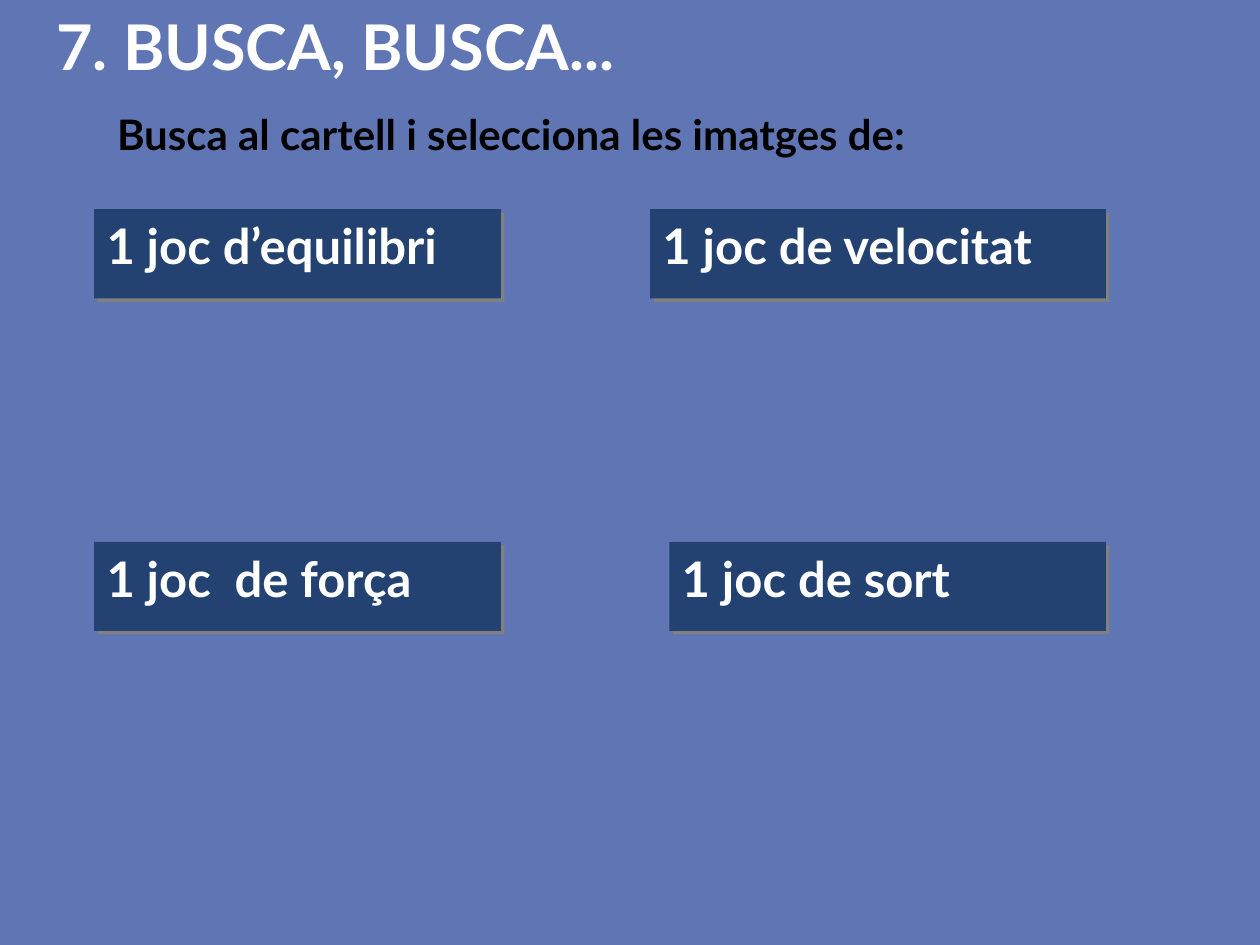
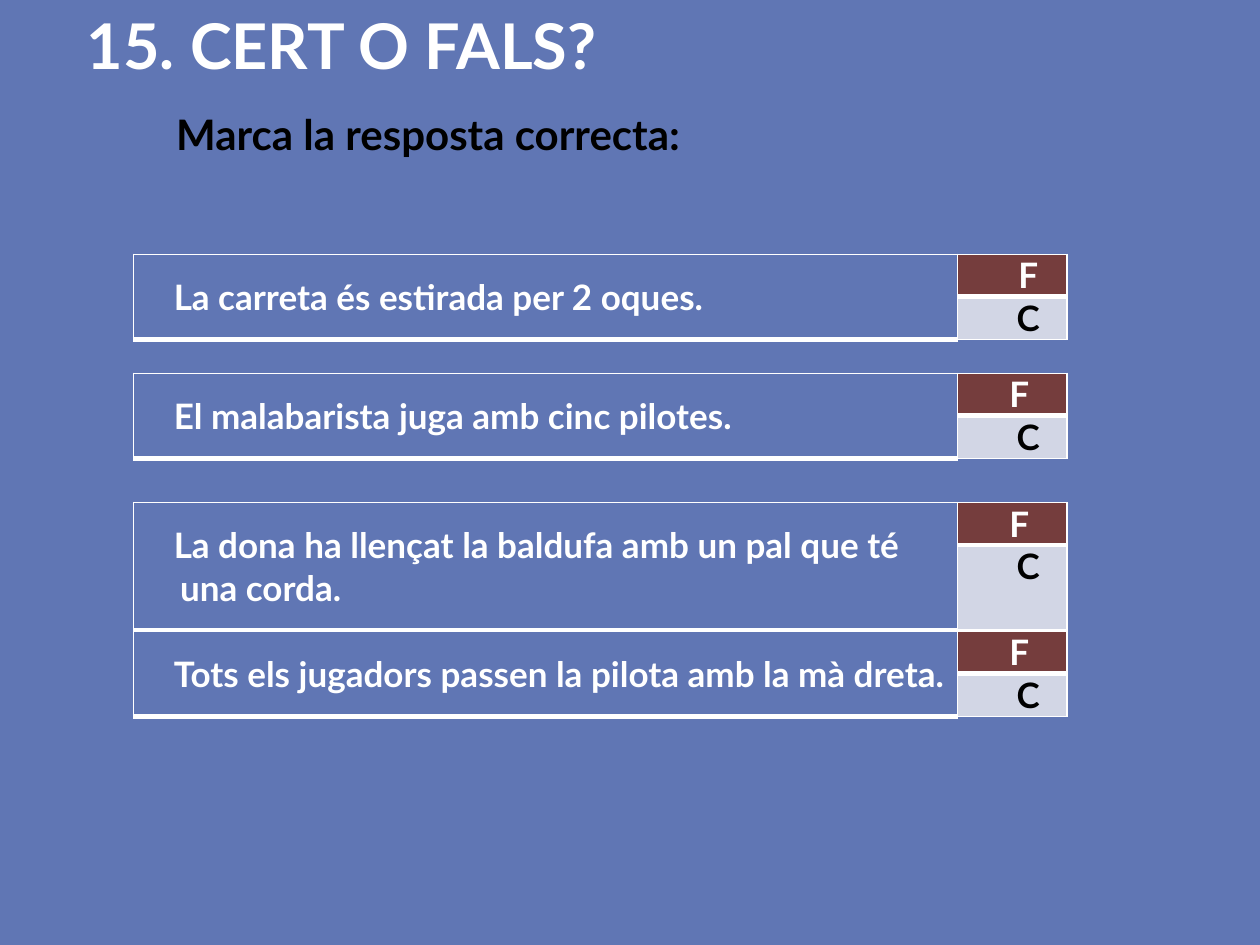
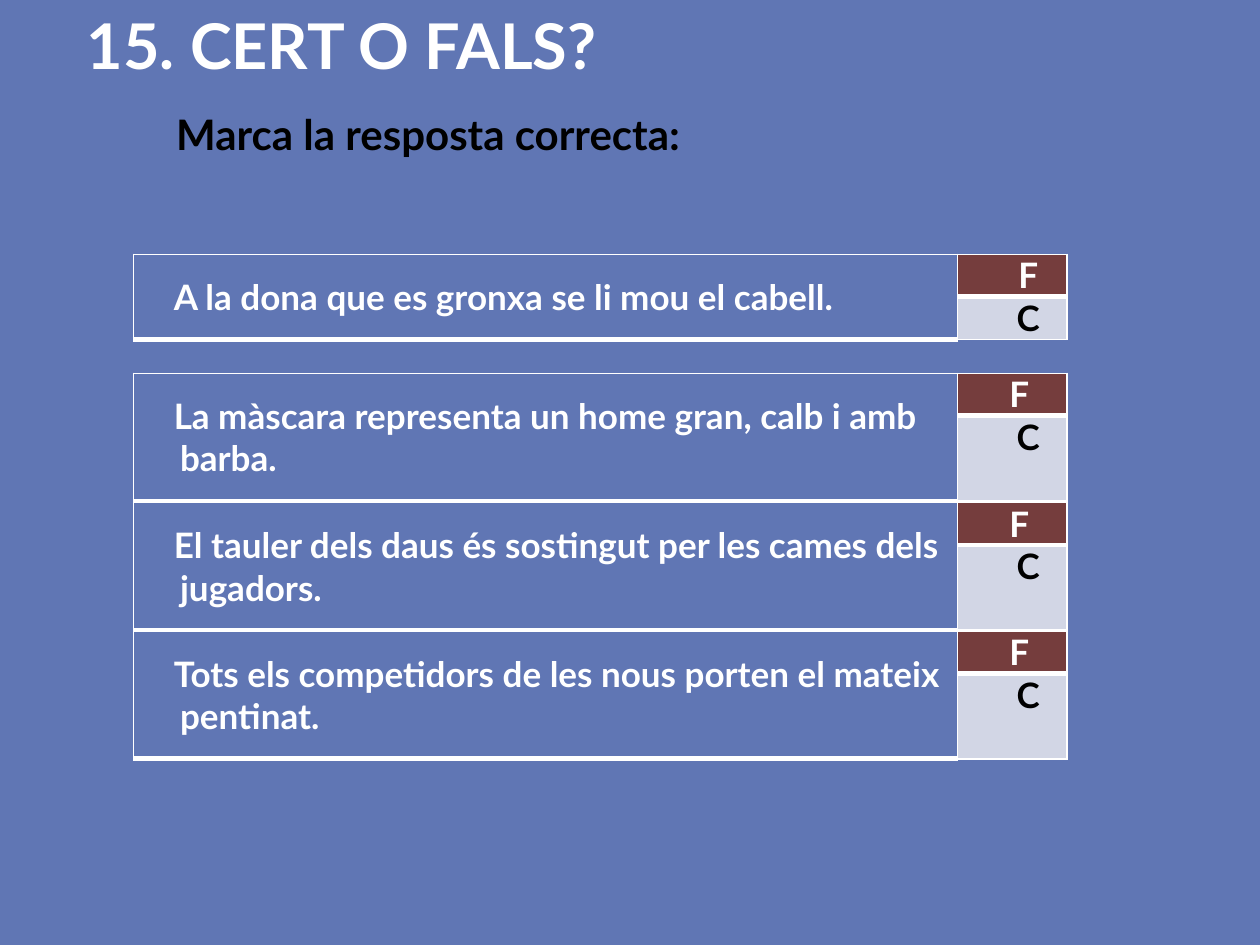
from pptx import Presentation
from pptx.dml.color import RGBColor as RGB
from pptx.enum.shapes import MSO_SHAPE as SHAPE
from pptx.enum.text import MSO_ANCHOR as ANCHOR, PP_ALIGN as ALIGN
from pptx.oxml import parse_xml
from pptx.oxml.ns import nsdecls
from pptx.util import Pt

HUE = {"back": "6076B4", "box": "234271", "shade": "808080", "false": "753D3D",
       "true": "D2D6E5", "white": "FFFFFF", "black": "000000"}
FONT = "Lato"


def write(frame, text, size=20, hue="white", align=ALIGN.LEFT, anchor=ANCHOR.TOP,
          left=0, first=0, after=0):
    frame.word_wrap = True
    frame.vertical_anchor = anchor
    para = frame.paragraphs[0]
    para.alignment = align
    para.space_after = Pt(after)
    props = para._p.get_or_add_pPr()
    props.set("marL", str(Pt(left)))
    props.set("indent", str(Pt(first)))
    run = para.add_run()
    run.text = text
    font = run.font
    font.name, font.size, font.bold = FONT, Pt(size), True
    font.color.rgb = RGB.from_string(HUE[hue])


def paint(cell, hue, edges):
    cell.fill.solid()
    cell.fill.fore_color.rgb = RGB.from_string(HUE[hue])
    props = cell._tc.get_or_add_tcPr()
    for spot, (side, width) in enumerate(zip("LRTB", edges)):
        props.insert(spot, parse_xml(
            f'<a:ln{side} {nsdecls("a")} w="{Pt(width)}"><a:solidFill>'
            f'<a:srgbClr val="{HUE["white"]}"/></a:solidFill></a:ln{side}>'))


deck = Presentation()
deck.slide_width, deck.slide_height = Pt(720), Pt(540)
fill = deck.slide_master.background.fill
fill.solid()
fill.fore_color.rgb = RGB.from_string(HUE["back"])

# Headings: title and task, each with left, top, width, height
quiz = [("15. CERT O FALS?", (42.5, 0, 598, 73.5)),
        ("Marca la resposta correcta:", (93.6, 43, 623.5, 51.3))]
heads = [
    [("7. BUSCA, BUSCA...", (25.2, 0.7, 648, 73.5)),
     ("Busca al cartell i selecciona les imatges de:", (59.8, 49, 623.5, 45.3))],
    quiz, quiz]
looks = [dict(size=36), dict(size=24, hue="black", anchor=ANCHOR.BOTTOM)]
slides = []
for head in heads:
    slide = deck.slides.add_slide(deck.slide_layouts[6])
    slides.append(slide)
    for (text, place), look in zip(head, looks):
        area = slide.shapes.add_textbox(*map(Pt, place))
        write(area.text_frame, text, **look)

# Game boxes
games = [("1 joc d’equilibri", 53.8, 119.5, 232.5),
         ("1 joc  de força", 53.8, 309.6, 232.5),
         ("1 joc de velocitat", 371.5, 119.5, 260.5),
         ("1 joc de sort", 382.5, 309.6, 249.5)]
for text, left, top, width in games:
    box = slides[0].shapes.add_shape(SHAPE.RECTANGLE, Pt(left), Pt(top), Pt(width), Pt(51))
    box.fill.solid()
    box.fill.fore_color.rgb = RGB.from_string(HUE["box"])
    box.line.fill.background()
    box.shadow.inherit = False
    box._element.spPr.find(".//{*}effectLst").append(parse_xml(
        f'<a:outerShdw {nsdecls("a")} blurRad="0" dist="{Pt(2.8)}" dir="2700000" '
        f'algn="ctr" rotWithShape="0"><a:srgbClr val="{HUE["shade"]}"/></a:outerShdw>'))
    write(box.text_frame, text, size=28, after=10)

# True or false tables: statement and number of text lines
tops = [145.3, 213.3, 287.2, 360.7]
asks = [
    [("La carreta és estirada per 2 oques.", 1),
     ("El malabarista juga amb cinc pilotes.", 1),
     ("La dona ha llençat la baldufa amb un pal que té una corda.", 2),
     ("Tots els jugadors passen la pilota amb la mà dreta.", 1)],
    [("A la dona que es gronxa se li mou el cabell.", 1),
     ("La màscara representa un home gran, calb i amb barba.", 2),
     ("El tauler dels daus és sostingut per les cames dels jugadors.", 2),
     ("Tots els competidors de les nous porten el mateix pentinat.", 2)]]
hang = dict(left=21.6, first=-3.6)
for slide, rows in zip(slides[1:], asks):
    for spot, (top, (text, lines)) in enumerate(zip(tops, rows)):
        high = 24.3 * lines
        grid = slide.shapes.add_table(2, 2, Pt(76.3), Pt(top), Pt(533.5),
                                      Pt(24.3 + high)).table
        grid.first_row = grid.horz_banding = False
        grid.columns[0].width, grid.columns[1].width = Pt(471), Pt(62.5)
        grid.rows[0].height, grid.rows[1].height = Pt(24.3), Pt(high)
        ask, no, yes = grid.cell(0, 0), grid.cell(0, 1), grid.cell(1, 1)
        ask.merge(grid.cell(1, 0))
        shift = dict(left=8) if spot else hang
        parts = [
            (ask, text, "back", (1, 1, 1, 3), dict(anchor=ANCHOR.MIDDLE, **hang)),
            (no, "F", "false", (1, 1, 1, 3), dict(align=ALIGN.CENTER, **shift)),
            (yes, "C", "true", (1, 1, 1, 1), dict(align=ALIGN.CENTER, hue="black", **hang))]
        for cell, words, hue, edges, look in parts:
            cell.margin_left = cell.margin_right = Pt(5)
            cell.margin_top = cell.margin_bottom = 0
            anchor = look.pop("anchor", ANCHOR.TOP)
            write(cell.text_frame, words, **look)
            cell.vertical_anchor = anchor
            paint(cell, hue, edges)

deck.save("out.pptx")
